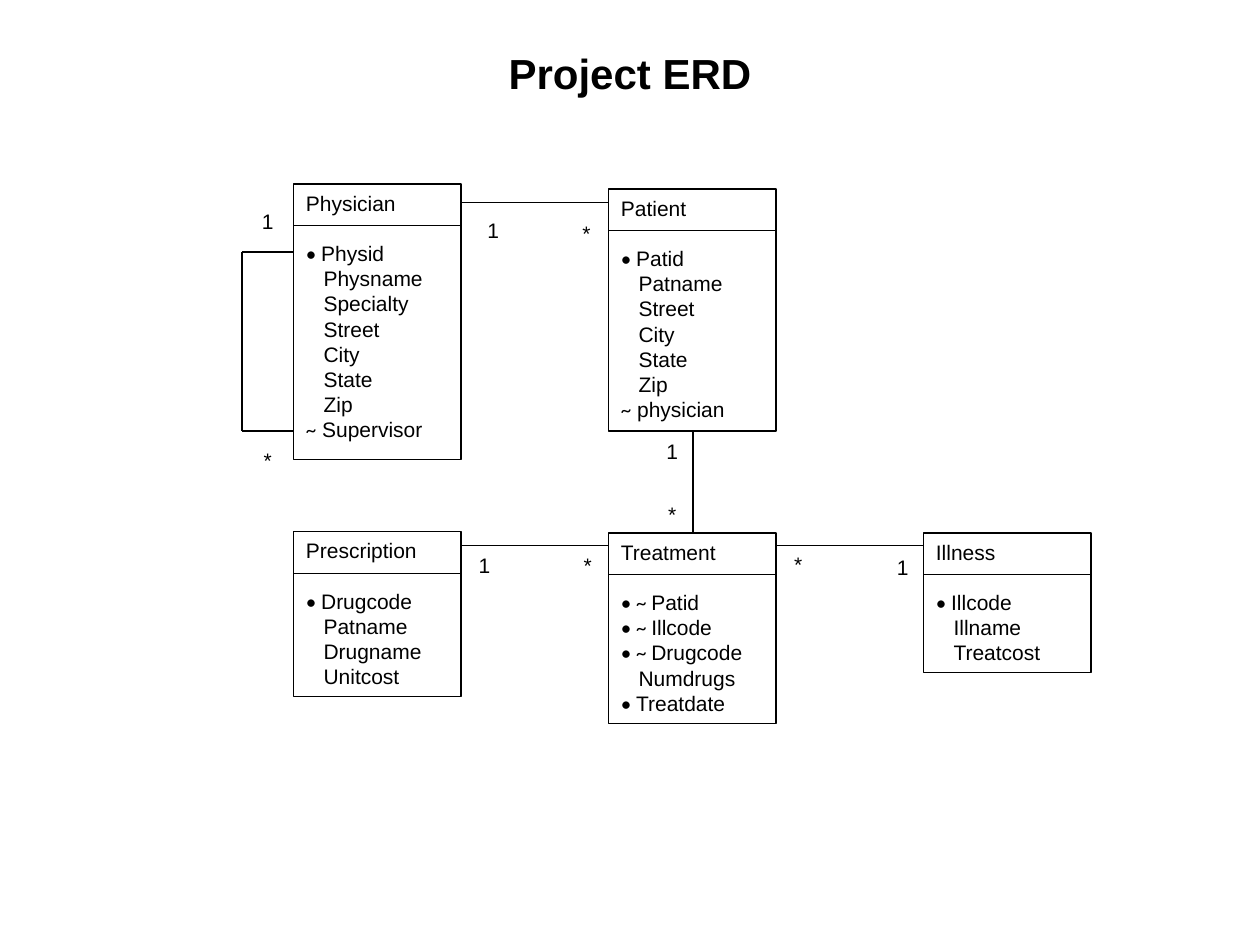
from lxml import etree
from pptx import Presentation
from pptx import util as u
from pptx.dml.color import RGBColor
from pptx.enum import shapes, text
from pptx.oxml.ns import qn

INK = {"black": "000000"}
BLACK = RGBColor.from_string(INK["black"])
WIDE = 1.33  # entity width
HEAD = 0.33  # height of the name row

deck = Presentation()
deck.slide_width, deck.slide_height = u.Inches(10), u.Inches(7.5)
slide = deck.slides.add_slide(deck.slide_layouts[6])


def write(frame, rows, size=12, bold=False, align=text.PP_ALIGN.LEFT):
    """Fill a frame with rows of (mark, words); marks are set in Calibri."""
    frame.word_wrap = True
    frame.vertical_anchor = text.MSO_ANCHOR.TOP
    for i, (mark, words) in enumerate(rows):
        para = frame.paragraphs[0] if i == 0 else frame.add_paragraph()
        para.alignment = align
        para.line_spacing = u.Pt(size * 1.2)
        for part, face in ((mark, "Calibri"), (words, "Arial")):
            if part:
                run = para.add_run()
                run.text = part
                run.font.name, run.font.size = face, u.Pt(size)
                run.font.bold = bold
                run.font.color.rgb = BLACK


def join(x1, y1, x2, y2):
    """Draw a thin line without a shadow."""
    line = slide.shapes.add_connector(
        shapes.MSO_CONNECTOR.STRAIGHT, *map(u.Inches, (x1, y1, x2, y2)))
    line.line.color.rgb = BLACK
    line.line.width = u.Pt(0.75)
    etree.SubElement(line._element.spPr, qn("a:effectLst"))


# Entities: name, left, top, height, fields (• key, ~ foreign key)
tables = [
    ("Patient", 4.83, 1.5, 1.92,
     [("• ", "Patid"), ("", "Patname"), ("", "Street"), ("", "City"),
      ("", "State"), ("", "Zip"), ("~", " physician")]),
    ("Treatment", 4.83, 4.23, 1.51,
     [("• ~ ", "Patid"), ("• ~ ", "Illcode"), ("• ~ ", "Drugcode"),
      ("", "Numdrugs"), ("• ", "Treatdate")]),
    ("Physician", 2.33, 1.46, 2.19,
     [("• ", "Physid"), ("", "Physname"), ("", "Specialty"), ("", "Street"),
      ("", "City"), ("", "State"), ("", "Zip"), ("~", " Supervisor")]),
    ("Illness", 7.33, 4.23, 1.11,
     [("• ", "Illcode"), ("", "Illname"), ("", "Treatcost")]),
    ("Prescription", 2.33, 4.22, 1.31,
     [("• ", "Drugcode"), ("", "Patname"), ("", "Drugname"),
      ("", "Unitcost")]),
]
for name, left, top, high, fields in tables:
    box = slide.shapes.add_shape(
        shapes.MSO_SHAPE.RECTANGLE, *map(u.Inches, (left, top, WIDE, high)))
    box.shadow.inherit = False
    box.fill.background()
    box.line.color.rgb = BLACK
    box.line.width = u.Pt(0.75)
    write(box.text_frame, [("", name)] + fields)
    title, *rest = box.text_frame.paragraphs
    title.space_after = u.Pt(14.4)
    for para, (mark, _) in zip(rest, fields):
        if not mark:  # plain fields line up past the marks
            para._p.get_or_add_pPr().set("marL", str(u.Inches(0.14)))
    join(left, top + HEAD, left + WIDE, top + HEAD)

# Relationships
for ends in [
    (3.67, 1.61, 4.83, 1.61),  # Physician to Patient
    (5.5, 3.42, 5.5, 4.22),    # Patient to Treatment
    (3.67, 4.33, 4.83, 4.33),  # Prescription to Treatment
    (6.17, 4.33, 7.33, 4.33),  # Treatment to Illness
    (1.92, 2, 2.33, 2),        # Physician to its supervisor
    (1.92, 2, 1.92, 3.42),
    (1.92, 3.42, 2.33, 3.42),
]:
    join(*ends)

# Title and cardinalities: words, left, top, width, height, size
labels = [("Project ERD", 0.5, 0.33, 9, 0.5, 24)]
counts = {
    "1": [(1.96, 1.61), (3.75, 1.68), (5.17, 3.43), (3.68, 4.34), (7, 4.35)],
    "*": [(1.96, 3.5), (4.49, 1.7), (5.17, 3.93), (4.5, 4.34), (6.17, 4.33)],
}
for sign, spots in counts.items():
    labels += [(sign, x, y, 0.33, 0.3, 12) for x, y in spots]
for words, *area, size in labels:
    box = slide.shapes.add_textbox(*map(u.Inches, area))
    write(box.text_frame, [("", words)], size=size, bold=size > 12,
          align=text.PP_ALIGN.CENTER)

deck.save("out.pptx")
